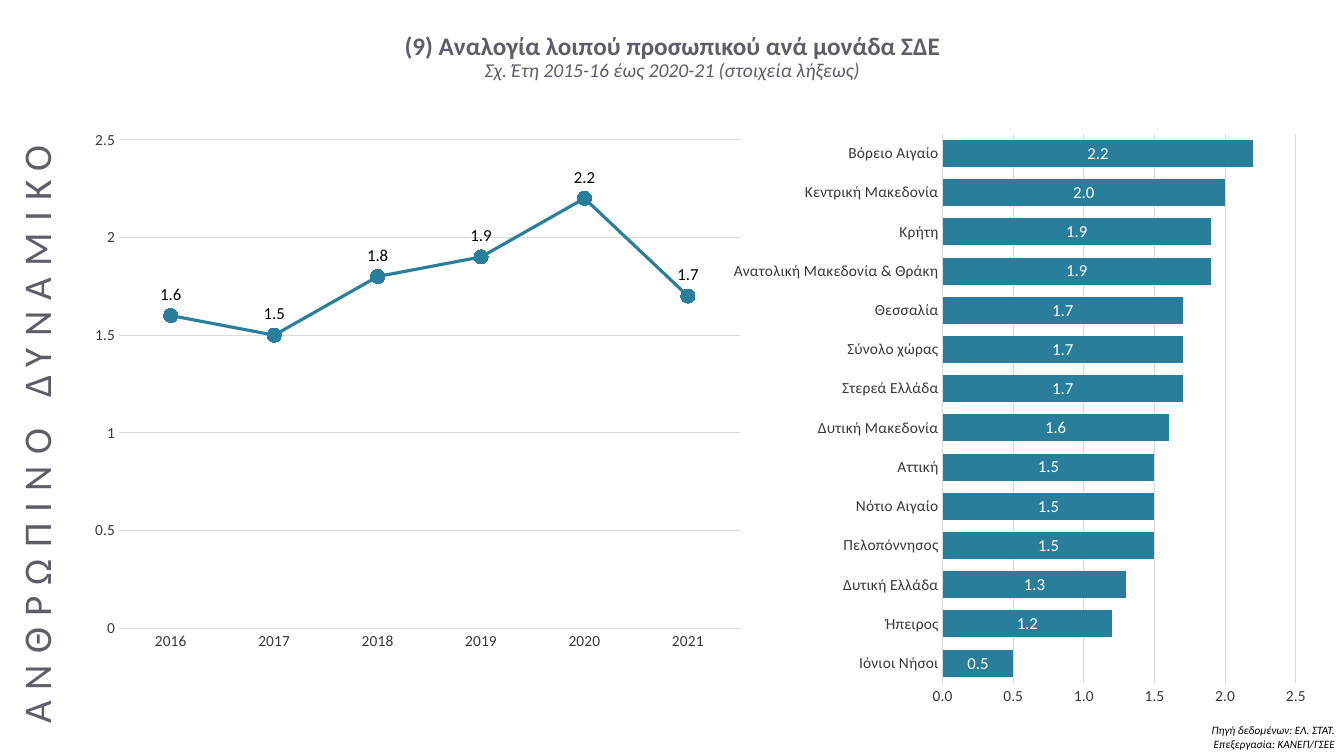
from lxml import etree
from pptx import Presentation
from pptx.chart.data import CategoryChartData
from pptx.dml.color import RGBColor
from pptx.enum.chart import (XL_CHART_TYPE as CT, XL_LABEL_POSITION as LP,
                             XL_MARKER_STYLE as MS, XL_TICK_MARK as TM)
from pptx.enum.text import MSO_ANCHOR as MA, PP_ALIGN as AL
from pptx.oxml import parse_xml
from pptx.oxml.ns import nsdecls
from pptx.util import Inches, Pt

FONT, TEAL, GREY, DARK, PALE = "Calibri", "297E9B", "5F5D6A", "3B3838", "D9D9D9"


def rgb(value):
    return RGBColor.from_string(value)


def style(font, size, color, **flags):
    font.name, font.size = FONT, Pt(size)
    font.color.rgb = rgb(color)
    for name, value in flags.items():
        setattr(font, name, value)


prs = Presentation()
prs.slide_width, prs.slide_height = Inches(13.33), Inches(7.5)
s = prs.slides.add_slide(prs.slide_layouts[6])

# Text: box, rotation, alignment, anchor, line spacing, then the lines
source = dict(size=8, color="000000", italic=True)
texts = [
    ((7.39, 7.13, 5.95, 0.37), 0, AL.RIGHT, MA.TOP, 1.0,
     [("Πηγή δεδομένων: ΕΛ. ΣΤΑΤ.", source),
      ("Επεξεργασία: ΚΑΝΕΠ/ΓΣΕΕ", source)]),
    ((0.92, 0, 11.5, 1.14), 0, AL.CENTER, MA.MIDDLE, 0.9,
     [("(9) Αναλογία λοιπού προσωπικού ανά μονάδα ΣΔΕ",
       dict(size=18, color=GREY, bold=True)),
      ("Σχ. Έτη 2015-16 έως 2020-21 (στοιχεία λήξεως)",
       dict(size=14, color=GREY, italic=True))]),
    ((-3, 3.74, 6.76, 1.14), 270, AL.CENTER, MA.MIDDLE, 0.9,
     [("ΑΝΘΡΩΠΙΝΟ ΔΥΝΑΜΙΚΟ", dict(size=28, color=GREY))]),
]
for box, rotation, align, anchor, spacing, lines in texts:
    sp = s.shapes.add_textbox(*map(Inches, box))
    sp.rotation = rotation
    tf = sp.text_frame
    tf.word_wrap, tf.vertical_anchor = True, anchor
    p = tf.paragraphs[0]
    p.alignment, p.line_spacing = align, spacing
    for i, (text, look) in enumerate(lines):
        if i:
            p.add_line_break()
        r = p.add_run()
        r.text = text
        style(r.font, **look)
# The last text is the side heading, with letters 8 pt apart
r.font._element.set("spc", "800")

years = {"2016": 1.6, "2017": 1.5, "2018": 1.8, "2019": 1.9, "2020": 2.2, "2021": 1.7}
regions = {
    "Ιόνιοι Νήσοι": 0.5, "Ήπειρος": 1.2, "Δυτική Ελλάδα": 1.3,
    "Πελοπόννησος": 1.5, "Νότιο Αιγαίο": 1.5, "Αττική": 1.5,
    "Δυτική Μακεδονία": 1.6, "Στερεά Ελλάδα": 1.7, "Σύνολο χώρας": 1.7,
    "Θεσσαλία": 1.7, "Ανατολική Μακεδονία & Θράκη": 1.9, "Κρήτη": 1.9,
    "Κεντρική Μακεδονία": 2, "Βόρειο Αιγαίο": 2.2,
}
# Charts: type, box, values, axis format, label format, label place, label colour
charts = [
    (CT.LINE_MARKERS, (0.78, 1.21, 6.69, 5.91), years,
     "General", "General", LP.ABOVE, "000000"),
    (CT.BAR_STACKED, (7.16, 1.21, 5.91, 5.91), regions,
     "0.0", "#,##0.0", LP.CENTER, "FFFFFF"),
]
for kind, box, values, axis_fmt, label_fmt, place, label_color in charts:
    data = CategoryChartData()
    data.categories = list(values)
    data.add_series("Series 1", list(values.values()))
    chart = s.shapes.add_chart(kind, *map(Inches, box), data).chart
    chart.has_legend = chart.has_title = False
    style(chart.font, 10, "000000")

    cat, val = chart.category_axis, chart.value_axis
    for axis in (cat, val):
        axis.major_tick_mark = axis.minor_tick_mark = TM.NONE
        style(axis.tick_labels.font, 11, DARK)
    val.minimum_scale, val.maximum_scale, val.major_unit = 0, 2.5, 0.5
    val.tick_labels.number_format = axis_fmt
    val.tick_labels.number_format_is_linked = False
    val.format.line.fill.background()
    for line in (cat.format.line, val.major_gridlines.format.line):
        line.color.rgb, line.width = rgb(PALE), Pt(0.75)

    plot = chart.plots[0]
    plot.vary_by_categories = False
    series = plot.series[0]
    labels = series.data_labels
    labels.show_value, labels.position = True, place
    labels.number_format, labels.number_format_is_linked = label_fmt, False
    style(labels.font, 12, label_color)

    if kind == CT.BAR_STACKED:
        plot.gap_width, plot.overlap = 45, 100
        series.format.fill.solid()
        series.format.fill.fore_color.rgb = rgb(TEAL)
        continue
    series.smooth = False
    series.format.line.color.rgb, series.format.line.width = rgb(TEAL), Pt(2.25)
    marker = series.marker
    marker.style, marker.size = MS.CIRCLE, 10
    marker.format.fill.solid()
    marker.format.fill.fore_color.rgb = rgb(TEAL)
    marker.format.line.color.rgb = rgb(TEAL)

    # Fixed inner plot area, in fractions of the chart
    area = chart._chartSpace.chart.plotArea
    for old in area.findall("{*}layout"):
        area.remove(old)
    layout = parse_xml(f"<c:layout {nsdecls('c')}><c:manualLayout/></c:layout>")
    settings = dict(layoutTarget="inner", xMode="edge", yMode="edge",
                    x="0.06", y="0.03", w="0.92", h="0.82")
    for name, value in settings.items():
        tag = etree.QName(layout).namespace
        etree.SubElement(layout[0], f"{{{tag}}}{name}").set("val", value)
    area.insert(0, layout)

prs.save("out.pptx")
